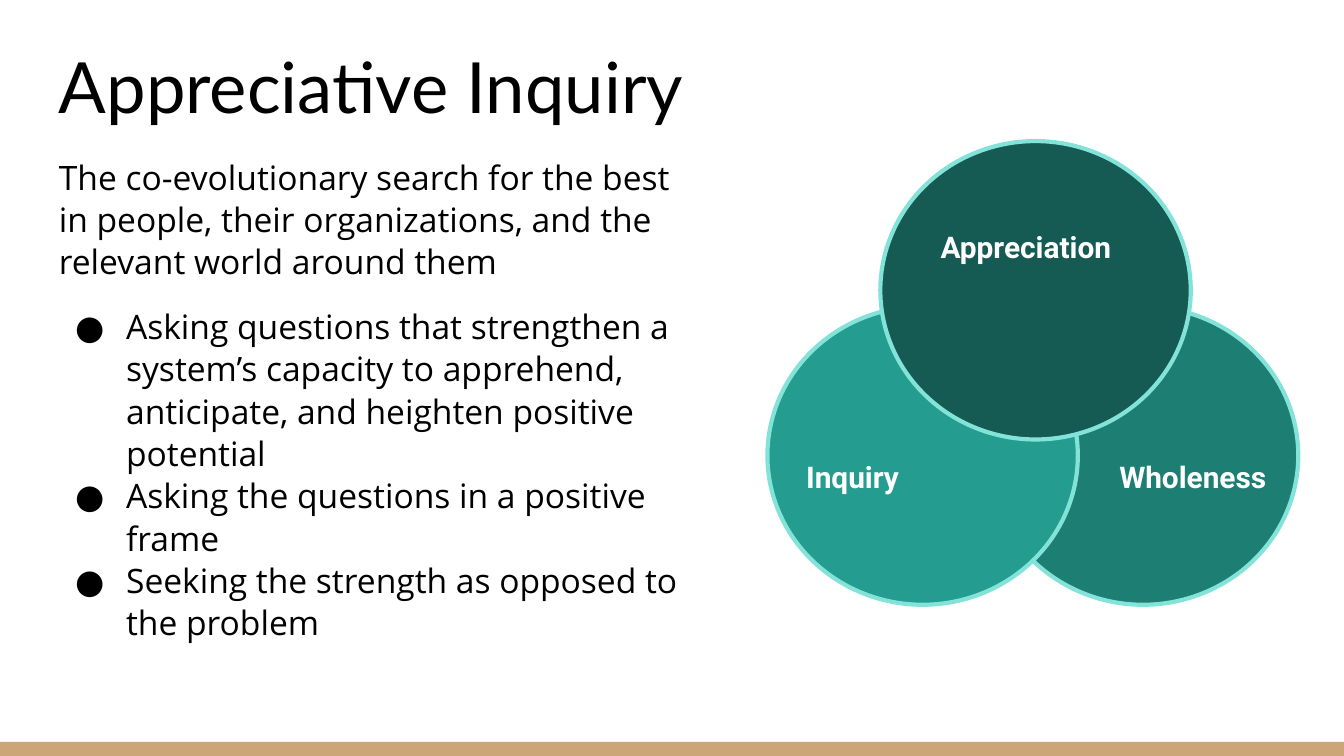
from lxml import etree
from pptx import Presentation
from pptx.dml.color import RGBColor
from pptx.enum.shapes import MSO_SHAPE as SHAPE
from pptx.enum.text import MSO_ANCHOR as ANCHOR
from pptx.oxml.ns import qn
from pptx.util import Inches, Pt

BLACK, WHITE = "000000", "FFFFFF"
TAN, AQUA = "CCA677", "83E3D9"
INTRO = ("The co-evolutionary search for the best in people, "
         "their organizations, and the relevant world around them")
POINTS = [
    "Asking questions that strengthen a system’s capacity to apprehend, "
    "anticipate, and heighten positive potential",
    "Asking the questions in a positive frame",
    "Seeking the strength as opposed to the problem",
]
# name, fill, circle offset, label offset, label width
CIRCLES = [
    ("Wholeness", "1D7E74", (1.64, 1.23), (2.52, 2.16), 1.34),
    ("Inquiry", "249C90", (0, 1.23), (0.19, 2.16), 1.34),
    ("Appreciation", "155B54", (0.84, 0), (1.19, 0.45), 1.61),
]


def rgb(value):
    """Turn a hex string into a colour."""
    return RGBColor.from_string(value)


def add_shape(s, kind, box, fill, line=None):
    """Add a flat filled shape with an optional outline."""
    sp = s.shapes.add_shape(kind, *map(Inches, box))
    sp.shadow.inherit = False
    sp.fill.solid()
    sp.fill.fore_color.rgb = rgb(fill)
    if line:
        sp.line.color.rgb = rgb(line)
        sp.line.width = Pt(2.25)
    else:
        sp.line.fill.background()
    return sp


def add_box(s, box, anchor):
    """Add an empty wrapping text frame with even insets."""
    tf = s.shapes.add_textbox(*map(Inches, box)).text_frame
    tf.word_wrap = True
    tf.vertical_anchor = anchor
    tf.margin_left = tf.margin_right = Inches(0.1)
    tf.margin_top = tf.margin_bottom = Inches(0.1)
    return tf


def add_run(p, text, size, font, color, bold=False):
    """Append one styled run to a paragraph."""
    r = p.add_run()
    r.text = text
    r.font.size = Pt(size)
    r.font.name = font
    r.font.bold = bold
    r.font.color.rgb = rgb(color)


def add_bullet(p):
    """Give a paragraph a hanging round bullet."""
    pPr = p._p.get_or_add_pPr()
    pPr.set("marL", str(Inches(0.5)))
    pPr.set("indent", str(Inches(-0.38)))
    color = etree.SubElement(pPr, qn("a:buClr"))
    etree.SubElement(color, qn("a:srgbClr"), val=BLACK)
    etree.SubElement(pPr, qn("a:buFont"), typeface="Open Sans")
    etree.SubElement(pPr, qn("a:buChar"), char="●")


def add_title(s, box):
    """Place the slide title."""
    tf = add_box(s, box, ANCHOR.BOTTOM)
    add_run(tf.paragraphs[0], "Appreciative Inquiry", 37.8, "Lato", BLACK)


def add_body(s, box):
    """Place the definition and its bulleted points."""
    tf = add_box(s, box, ANCHOR.TOP)
    for i, text in enumerate([INTRO, *POINTS]):
        p = tf.add_paragraph() if i else tf.paragraphs[0]
        p.line_spacing = 1.05
        p.space_before = Pt(12 if i == 1 else 0)
        if i:
            add_bullet(p)
        add_run(p, text, 18, "Open Sans", BLACK)


def add_circles(s, left, top):
    """Place three overlapping labelled circles."""
    for name, fill, (cx, cy), (tx, ty), width in CIRCLES:
        add_shape(s, SHAPE.OVAL, (left + cx, top + cy, 2.31, 2.22), fill, AQUA)
        tf = add_box(s, (left + tx, top + ty, width, 0.63), ANCHOR.MIDDLE)
        p = tf.paragraphs[0]
        p.line_spacing = 1.15
        add_run(p, name, 16, "Roboto", WHITE, bold=True)


def main():
    """Build the slide and save it."""
    prs = Presentation()
    prs.slide_width, prs.slide_height = Inches(10), Inches(10 * 9 / 16)
    s = prs.slides.add_slide(prs.slide_layouts[6])
    add_shape(s, SHAPE.RECTANGLE, (0, 5.52, 10, 0.11), TAN)
    add_title(s, (0.34, 0.42, 9.32, 0.63))
    add_body(s, (0.34, 1.05, 5, 4.11))
    add_circles(s, 5.71, 1.05)
    prs.save("out.pptx")


if __name__ == "__main__":
    main()
